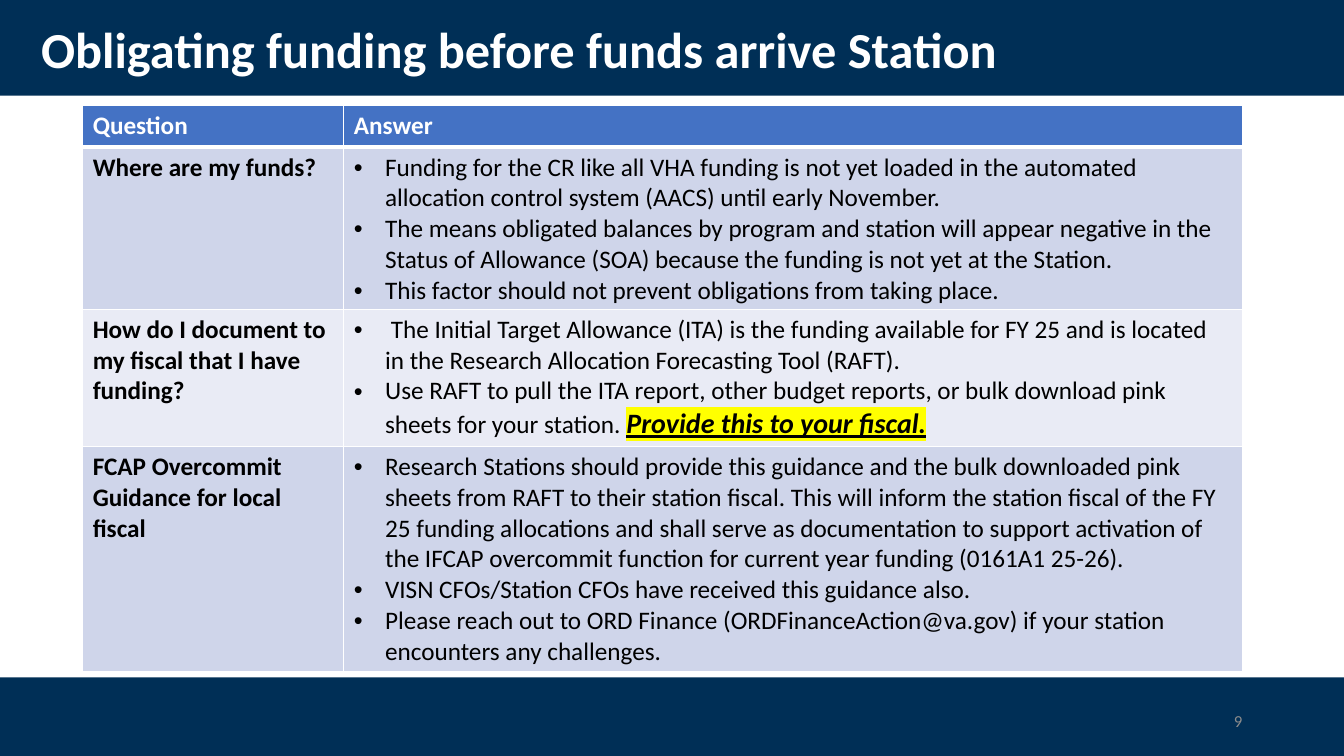
from lxml import etree
from pptx import Presentation
from pptx.dml.color import RGBColor
from pptx.enum import shapes, text
from pptx.oxml.ns import qn
from pptx.util import Inches, Pt

# Content
TITLE = "Obligating funding before funds arrive Station"
PAGE = "9"
HEADS = ("Question", "Answer")
STRESS = "Provide this to your fiscal."
ROWS = [
    ("Where are my funds?", [
        "Funding for the CR like all VHA funding is not yet loaded in the automated "
        "allocation control system (AACS) until early November.",
        "The means obligated balances by program and station will appear negative in the "
        "Status of Allowance (SOA) because the funding is not yet at the Station.",
        "This factor should not prevent obligations from taking place."]),
    ("How do I document to my fiscal that I have funding?", [
        " The Initial Target Allowance (ITA) is the funding available for FY 25 and is "
        "located in the Research Allocation Forecasting Tool (RAFT).",
        "Use RAFT to pull the ITA report, other budget reports, or bulk download pink "
        "sheets for your station. " + STRESS]),
    ("FCAP Overcommit Guidance for local fiscal", [
        "Research Stations should provide this guidance and the bulk downloaded pink "
        "sheets from RAFT to their station fiscal. This will inform the station fiscal "
        "of the FY 25 funding allocations and shall serve as documentation to support "
        "activation of the IFCAP overcommit function for current year funding "
        "(0161A1 25-26).",
        "VISN CFOs/Station CFOs have received this guidance also.",
        "Please reach out to ORD Finance (ORDFinanceAction@va.gov) if your station "
        "encounters any challenges."]),
]
COLORS = {"navy": "002F56", "head": "4472C4", "odd": "CFD5EA", "even": "E9EBF5",
          "white": "FFFFFF", "black": "000000", "gray": "8C8C8C", "mark": "FFFF00"}
WIDTHS = (2.59, 8.91)
HEIGHTS = (0.41, 1.61, 1.36, 2.23)
BANDS = ((0, 0.95), (6.72, 0.78))

# Formats
HEAD = {"size": Pt(18), "bold": True, "color": "white"}
ASK = {**HEAD, "color": "black"}
BODY = {**ASK, "bold": False}
LOUD = {**ASK, "size": Pt(20), "italic": True, "underline": True}


def rgb(name):
    return RGBColor.from_string(COLORS[name])


def add_run(para, words, form):
    run = para.add_run()
    run.text = words
    for key, val in {"name": "Calibri", **form}.items():
        if key == "color":
            run.font.color.rgb = rgb(val)
        else:
            setattr(run.font, key, val)
    return run


def add_mark(run):
    props = run.font._element
    mark = etree.Element(qn("a:highlight"))
    etree.SubElement(mark, qn("a:srgbClr"), val=COLORS["mark"])
    props.find(qn("a:latin")).addprevious(mark)


def add_dot(para):
    props = para._p.get_or_add_pPr()
    props.set("marL", str(Inches(0.31)))
    props.set("indent", str(-Inches(0.31)))
    etree.SubElement(props, qn("a:buFont"), typeface="Arial")
    etree.SubElement(props, qn("a:buChar"), char="•")


def add_edges(cell, top, base):
    props = cell._tc.get_or_add_tcPr()
    sides = {"lnL": 1, "lnR": 1, "lnT": top, "lnB": base}
    for spot, (side, width) in enumerate(sides.items()):
        line = etree.Element(qn("a:" + side), w=str(Pt(width)))
        fill = etree.SubElement(line, qn("a:solidFill"))
        etree.SubElement(fill, qn("a:srgbClr"), val=COLORS["white"])
        props.insert(spot, line)


def add_label(slide, box, words, form, align):
    frame = slide.shapes.add_textbox(*map(Inches, box)).text_frame
    frame.word_wrap = True
    frame.vertical_anchor = text.MSO_ANCHOR.MIDDLE
    para = frame.paragraphs[0]
    para.alignment = align
    add_run(para, words, form)
    return para


def add_grid(slide):
    grid = slide.shapes.add_table(
        len(HEIGHTS), len(WIDTHS), Inches(0.82), Inches(1.05),
        Inches(sum(WIDTHS)), Inches(sum(HEIGHTS))).table
    for col, width in zip(grid.columns, WIDTHS):
        col.width = Inches(width)
    for row, height in zip(grid.rows, HEIGHTS):
        row.height = Inches(height)

    # Fills and borders
    for r, row in enumerate(grid.rows):
        tint = "head" if r == 0 else "odd" if r % 2 else "even"
        for cell in row.cells:
            cell.fill.solid()
            cell.fill.fore_color.rgb = rgb(tint)
            add_edges(cell, 3 if r == 1 else 1, 3 if r == 0 else 1)

    # Words
    for c, head in enumerate(HEADS):
        add_run(grid.cell(0, c).text_frame.paragraphs[0], head, HEAD)
    for r, (ask, points) in enumerate(ROWS, 1):
        add_run(grid.cell(r, 0).text_frame.paragraphs[0], ask, ASK)
        frame = grid.cell(r, 1).text_frame
        for i, point in enumerate(points):
            para = frame.add_paragraph() if i else frame.paragraphs[0]
            add_dot(para)
            plain, loud, _ = point.partition(STRESS)
            add_run(para, plain, BODY)
            if loud:
                add_mark(add_run(para, loud, LOUD))


def main():
    deck = Presentation()
    deck.slide_width, deck.slide_height = Inches(13.33), Inches(7.5)
    slide = deck.slides.add_slide(deck.slide_layouts[6])

    # Top and bottom bands
    for top, height in BANDS:
        band = slide.shapes.add_shape(shapes.MSO_SHAPE.RECTANGLE, 0, Inches(top),
                                      deck.slide_width, Inches(height))
        band.shadow.inherit = False
        band.fill.solid()
        band.fill.fore_color.rgb = rgb("navy")
        band.line.fill.background()

    # Title, table and page number
    title = add_label(slide, (0.31, 0.18, 11.5, 0.68), TITLE,
                      {**HEAD, "size": Pt(36)}, text.PP_ALIGN.LEFT)
    title.line_spacing = 0.9
    add_grid(slide)
    add_label(slide, (9.42, 6.95, 3, 0.4), PAGE,
              {"size": Pt(12), "color": "gray"}, text.PP_ALIGN.RIGHT)
    deck.save("out.pptx")


if __name__ == "__main__":
    main()
